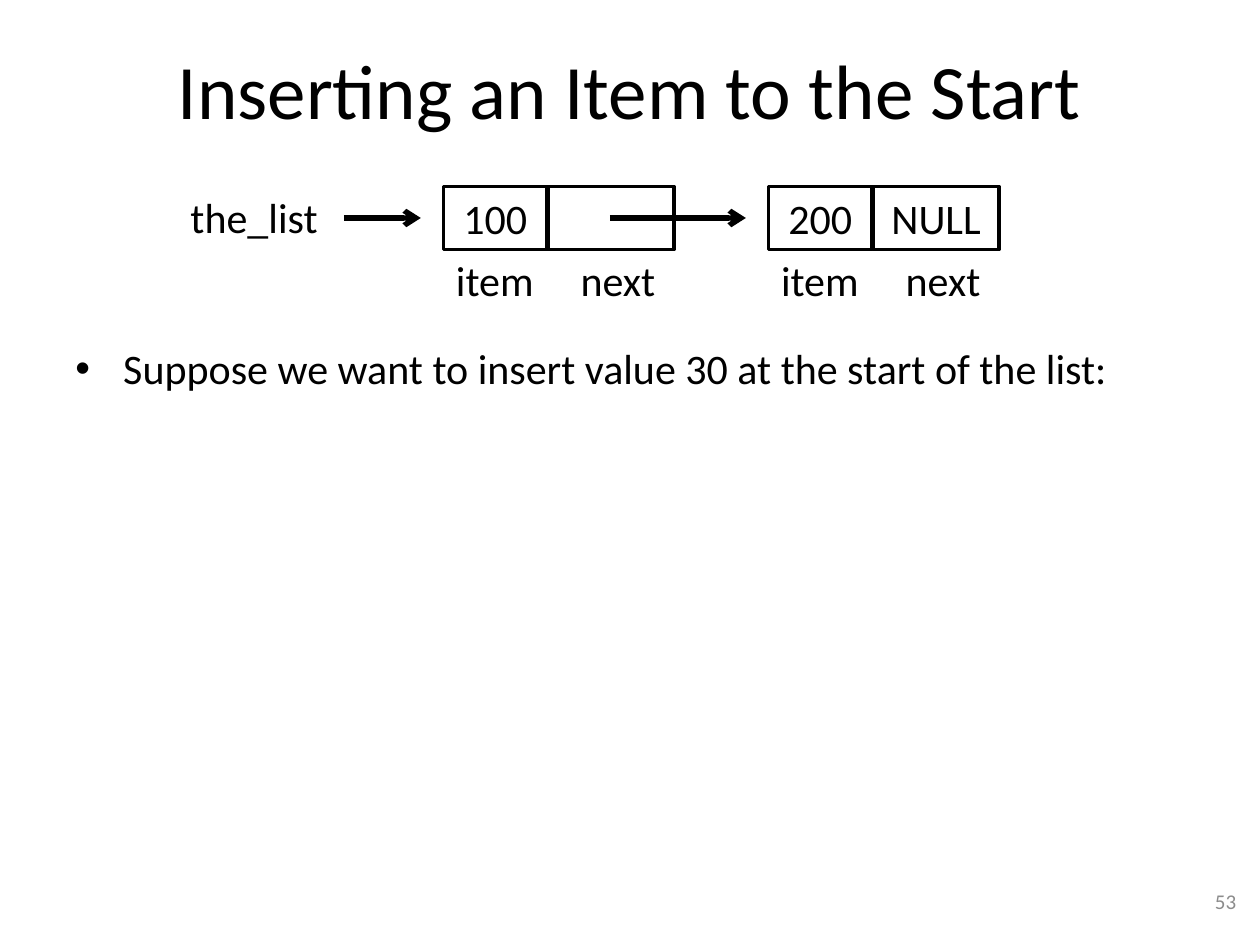
from pptx import Presentation
from pptx.dml.color import RGBColor
from pptx.enum.shapes import MSO_CONNECTOR, MSO_SHAPE
from pptx.enum.text import MSO_ANCHOR, PP_ALIGN
from pptx.oxml.ns import qn
from pptx.util import Inches, Pt
from lxml import etree

BLACK = RGBColor(0, 0, 0)
GRAY = RGBColor(0x8C, 0x8C, 0x8C)
LEFT, CENTER, RIGHT = PP_ALIGN.LEFT, PP_ALIGN.CENTER, PP_ALIGN.RIGHT
TOP, MIDDLE = MSO_ANCHOR.TOP, MSO_ANCHOR.MIDDLE
RECTANGLE = MSO_SHAPE.RECTANGLE
STRAIGHT = MSO_CONNECTOR.STRAIGHT

FONT = "Calibri"
NODE_TOP = 1.48
CELL_HEIGHT = 0.5
ITEM_WIDTH = 0.82
NEXT_WIDTH = 1
NEXT_OFFSET = 0.83
LABEL_TOP = 1.97
ARROW_Y = 1.73


def write(shape, text, size=24, color=BLACK, align=LEFT, anchor=TOP,
          wrap=True, bullet=False):
    frame = shape.text_frame
    frame.word_wrap = wrap
    frame.vertical_anchor = anchor
    paragraph = frame.paragraphs[0]
    paragraph.text = text
    paragraph.alignment = align
    if bullet:
        properties = paragraph._p.get_or_add_pPr()
        properties.set("marL", str(Inches(0.38)))
        properties.set("indent", str(Inches(-0.38)))
        etree.SubElement(properties, qn("a:buFont")).set("typeface", "Arial")
        etree.SubElement(properties, qn("a:buChar")).set("char", "•")
    font = paragraph.runs[0].font
    font.name = FONT
    font.size = Pt(size)
    font.color.rgb = color


def add_text(slide, text, left, top, width, height, **text_format):
    box = slide.shapes.add_textbox(
        Inches(left), Inches(top), Inches(width), Inches(height))
    write(box, text, **text_format)


def add_cell(slide, text, left, width):
    cell = slide.shapes.add_shape(
        RECTANGLE, Inches(left), Inches(NODE_TOP),
        Inches(width), Inches(CELL_HEIGHT))
    cell.shadow.inherit = False
    cell.fill.background()
    cell.line.color.rgb = BLACK
    cell.line.width = Pt(2)
    if text:
        write(cell, text, align=CENTER)


def add_node(slide, left, item, following=""):
    next_left = left + NEXT_OFFSET
    add_cell(slide, item, left, ITEM_WIDTH)
    add_cell(slide, following, next_left, NEXT_WIDTH)
    add_text(slide, "item", left, LABEL_TOP, ITEM_WIDTH, CELL_HEIGHT,
             wrap=False)
    add_text(slide, "next", next_left + 0.16, LABEL_TOP, 0.8, CELL_HEIGHT,
             wrap=False)


def add_arrow(slide, start, end):
    arrow = slide.shapes.add_connector(
        STRAIGHT, Inches(start), Inches(ARROW_Y), Inches(end), Inches(ARROW_Y))
    arrow.line.color.rgb = BLACK
    arrow.line.width = Pt(3)
    etree.SubElement(arrow.line._get_or_add_ln(),
                     qn("a:tailEnd")).set("type", "arrow")
    etree.SubElement(arrow._element.spPr, qn("a:effectLst"))


def main():
    deck = Presentation()
    deck.slide_width, deck.slide_height = Inches(10), Inches(7.5)
    slide = deck.slides.add_slide(deck.slide_layouts[6])

    add_text(slide, "Inserting an Item to the Start", 0.5, 0.08, 9, 1.25,
             size=44, align=CENTER, anchor=MIDDLE)
    add_text(slide, "Suppose we want to insert value 30 at the start of the list:",
             0.5, 2.67, 9, 4.17, bullet=True)
    add_text(slide, "53", 7.58, 6.95, 2.33, 0.4,
             size=12, color=GRAY, align=RIGHT, anchor=MIDDLE)

    add_text(slide, "the_list", 0.99, 1.47, 1.63, CELL_HEIGHT, align=RIGHT)
    add_node(slide, 3.52, "100")
    add_node(slide, 6.1, "200", "NULL")
    add_arrow(slide, 2.73, 3.34)
    add_arrow(slide, 4.84, 5.92)

    deck.save("out.pptx")


if __name__ == "__main__":
    main()
